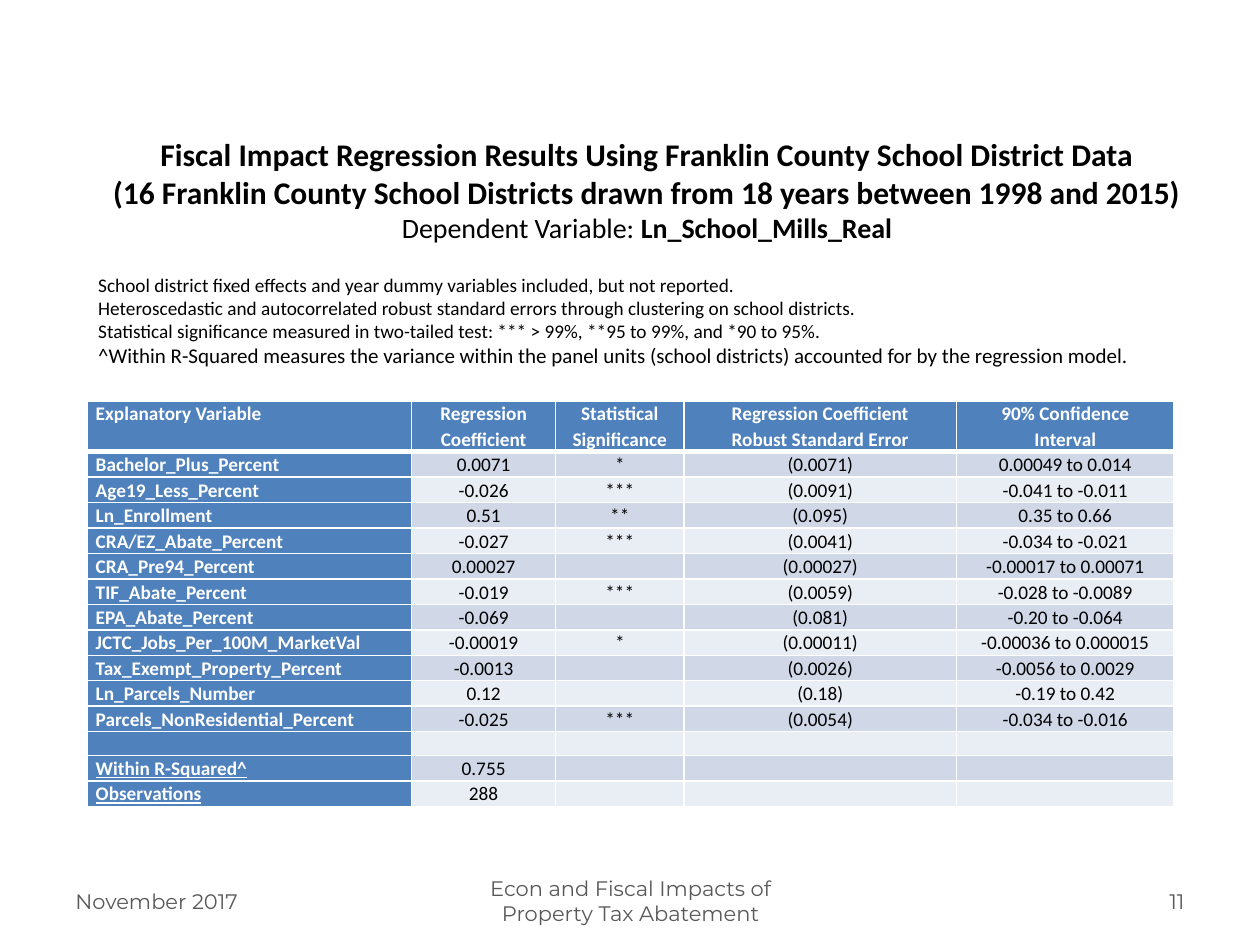
import lxml.etree
import pptx
import pptx.dml.color
import pptx.enum.text
import pptx.oxml.ns
import pptx.util

Cm = pptx.util.Cm
Pt = pptx.util.Pt
ALIGN = pptx.enum.text.PP_ALIGN
ANCHOR = pptx.enum.text.MSO_ANCHOR
qn = pptx.oxml.ns.qn

COLORS = {"text": "000000", "white": "FFFFFF", "footer": "595959",
          "head": "4F81BD", "band": "D0D8E8", "plain": "E9EDF4"}

NOTES = [
    ("School district fixed effects and year dummy variables included, but not reported.", 11),
    ("Heteroscedastic and autocorrelated robust standard errors through clustering "
     "on school districts.", 11),
    ("Statistical significance measured in two-tailed test: *** > 99%, **95 to 99%, "
     "and *90 to 95%.", 11),
    ("^Within R-Squared measures the variance within the panel units (school districts) "
     "accounted for by the regression model.", 12),
]

COLUMN_WIDTHS = [6.55, 2.9, 2.59, 5.49, 4.39]
HEADER_HEIGHT, ROW_HEIGHT = 0.96, 0.48
RESULTS = [
    ["Explanatory Variable", "Regression\nCoefficient", "Statistical\nSignificance",
     "Regression Coefficient\nRobust Standard Error", "90% Confidence\nInterval"],
    ["Bachelor_Plus_Percent", "0.0071", "*", "(0.0071)", "0.00049 to 0.014"],
    ["Age19_Less_Percent", "-0.026", "***", "(0.0091)", "-0.041 to -0.011"],
    ["Ln_Enrollment", "0.51", "**", "(0.095)", "0.35 to 0.66"],
    ["CRA/EZ_Abate_Percent", "-0.027", "***", "(0.0041)", "-0.034 to -0.021"],
    ["CRA_Pre94_Percent", "0.00027", "", "(0.00027)", "-0.00017 to 0.00071"],
    ["TIF_Abate_Percent", "-0.019", "***", "(0.0059)", "-0.028 to -0.0089"],
    ["EPA_Abate_Percent", "-0.069", "", "(0.081)", "-0.20 to -0.064"],
    ["JCTC_Jobs_Per_100M_MarketVal", "-0.00019", "*", "(0.00011)", "-0.00036 to 0.000015"],
    ["Tax_Exempt_Property_Percent", "-0.0013", "", "(0.0026)", "-0.0056 to 0.0029"],
    ["Ln_Parcels_Number", "0.12", "", "(0.18)", "-0.19 to 0.42"],
    ["Parcels_NonResidential_Percent", "-0.025", "***", "(0.0054)", "-0.034 to -0.016"],
    ["", "", "", "", ""],
    ["Within R-Squared^", "0.755", "", "", ""],
    ["Observations", "288", "", "", ""],
]
UNDERLINED = {"Within R-Squared^", "Observations"}


def color(name):
    return pptx.dml.color.RGBColor.from_string(COLORS[name])


def format_run(run, size, color_name="text", bold=False, font="Calibri"):
    run.font.name = font
    run.font.size = Pt(size)
    run.font.bold = bold
    run.font.color.rgb = color(color_name)


def set_frame(text_frame, anchor):
    text_frame.word_wrap = True
    text_frame.auto_size = pptx.enum.text.MSO_AUTO_SIZE.NONE
    text_frame.vertical_anchor = anchor
    text_frame.margin_top = text_frame.margin_bottom = 0


def add_text_box(slide, left, top, width, height, anchor):
    box = slide.shapes.add_textbox(Cm(left), Cm(top), Cm(width), Cm(height))
    set_frame(box.text_frame, anchor)
    return box.text_frame


def fill_title(slide):
    title = slide.shapes.title
    title.left, title.top, title.width, title.height = Cm(1.73), Cm(2.72), Cm(22.63), Cm(2.24)
    text_frame = title.text_frame
    set_frame(text_frame, ANCHOR.TOP)
    text_frame.text = ("Fiscal Impact Regression Results Using Franklin County School District Data\n"
                       "(16 Franklin County School Districts drawn from 18 years "
                       "between 1998 and 2015)\n"
                       "Dependent Variable: ")
    variable_line = text_frame.paragraphs[2]
    variable_line.add_run().text = "Ln_School_Mills_Real"
    for paragraph in text_frame.paragraphs:
        paragraph.alignment = ALIGN.CENTER
        for run in paragraph.runs:
            format_run(run, 18, bold=True)
    for run, bold in zip(variable_line.runs, (False, True)):
        format_run(run, 16, bold=bold)


def add_notes(slide):
    text_frame = add_text_box(slide, 1.73, 5.51, 22.63, 1.96, ANCHOR.TOP)
    text_frame.text = "\n".join(line for line, size in NOTES)
    for paragraph, (line, size) in zip(text_frame.paragraphs, NOTES):
        format_run(paragraph.runs[0], size)


def set_borders(cell, widths):
    """Draw white borders; widths are points for left, right, top, bottom."""
    properties = cell._tc.get_or_add_tcPr()
    for side, width in zip("LRTB", widths):
        line = lxml.etree.SubElement(properties, qn(f"a:ln{side}"), w=str(Pt(width)))
        fill = lxml.etree.SubElement(line, qn("a:solidFill"))
        lxml.etree.SubElement(fill, qn("a:srgbClr"), val=COLORS["white"])


def format_cell(cell, text, row, column):
    is_head = row == 0 or column == 0
    cell.margin_left = cell.margin_right = Cm(0.18)
    cell.margin_top = cell.margin_bottom = 0
    set_borders(cell, (1, 1, 3 if row == 1 else 1, 3 if row == 0 else 1))
    cell.fill.solid()
    cell.fill.fore_color.rgb = color("head" if is_head else "band" if row % 2 else "plain")
    cell.text_frame.text = text
    for paragraph in cell.text_frame.paragraphs:
        paragraph.alignment = ALIGN.CENTER if column else ALIGN.LEFT
        paragraph.line_spacing = 1.07
        for run in paragraph.runs:
            format_run(run, 11, "white" if is_head else "text", is_head)
            if text in UNDERLINED:
                run.font.underline = True
        if not paragraph.runs:
            # Keeps empty cells from stretching the row
            lxml.etree.SubElement(paragraph._p, qn("a:endParaRPr"), sz="1100")


def add_results_table(slide):
    height = HEADER_HEIGHT + ROW_HEIGHT * (len(RESULTS) - 1)
    table = slide.shapes.add_table(len(RESULTS), len(COLUMN_WIDTHS), Cm(1.75), Cm(8.08),
                                   Cm(sum(COLUMN_WIDTHS)), Cm(height)).table
    table.first_col = True
    for column, width in zip(table.columns, COLUMN_WIDTHS):
        column.width = Cm(width)
    for row_index, values in enumerate(RESULTS):
        table.rows[row_index].height = Cm(ROW_HEIGHT if row_index else HEADER_HEIGHT)
        for column_index, text in enumerate(values):
            format_cell(table.cell(row_index, column_index), text, row_index, column_index)


def add_footer(slide, text, left, width, alignment):
    text_frame = add_text_box(slide, left, 17.65, width, 1.02, ANCHOR.MIDDLE)
    text_frame.text = text
    paragraph = text_frame.paragraphs[0]
    paragraph.alignment = alignment
    format_run(paragraph.runs[0], 12, "footer", font="Montserrat")


def main():
    presentation = pptx.Presentation()
    presentation.slide_width, presentation.slide_height = Cm(25.4), Cm(19.05)
    slide = presentation.slides.add_slide(presentation.slide_layouts[5])

    # Heading and method notes
    fill_title(slide)
    add_notes(slide)

    # Regression results
    add_results_table(slide)

    # Footer
    add_footer(slide, "November 2017", 1.27, 5.92, ALIGN.LEFT)
    add_footer(slide, "Econ and Fiscal Impacts of Property Tax Abatement", 8.69, 8.05, ALIGN.CENTER)
    add_footer(slide, "11", 18.21, 5.92, ALIGN.RIGHT)

    presentation.save("out.pptx")


if __name__ == "__main__":
    main()
